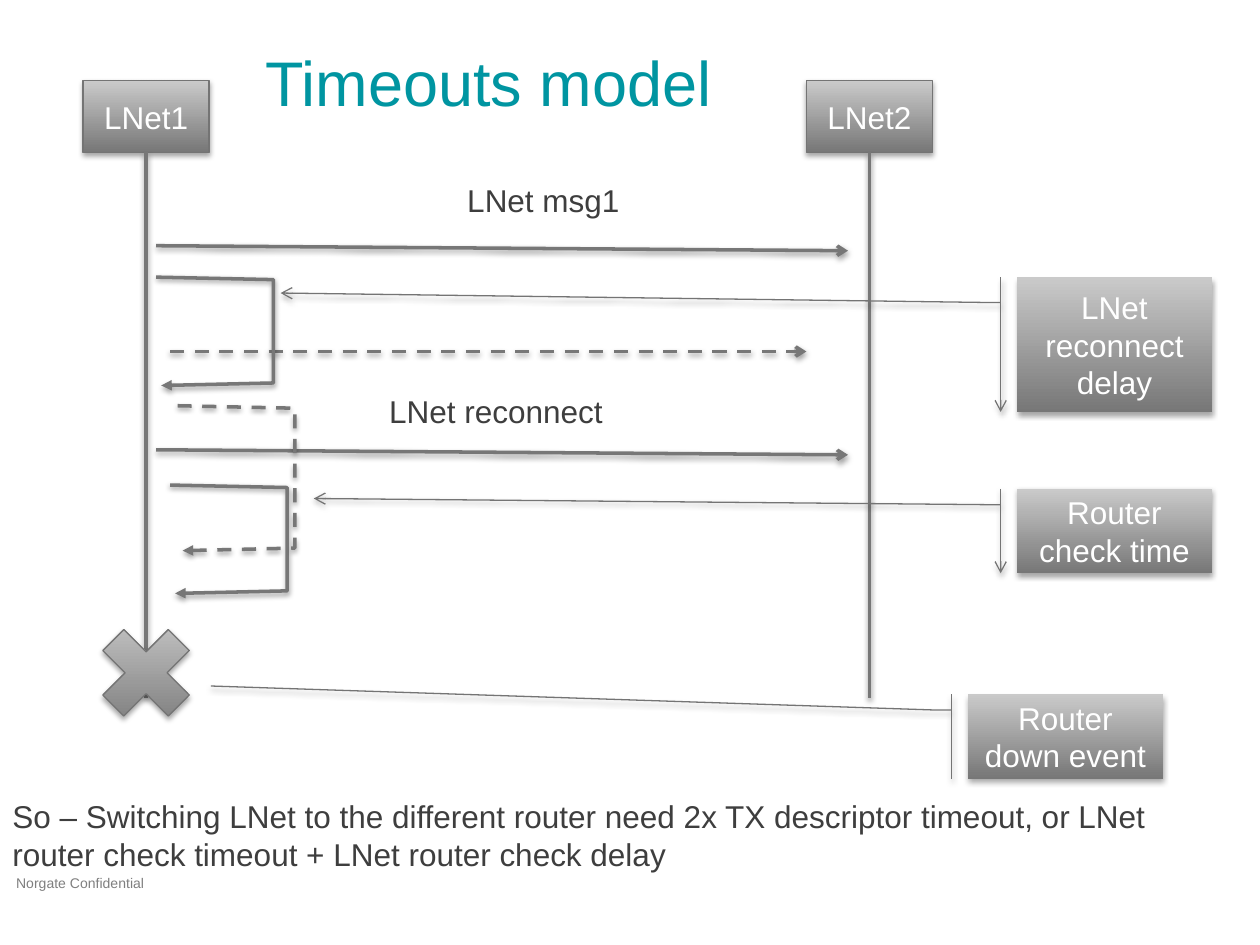
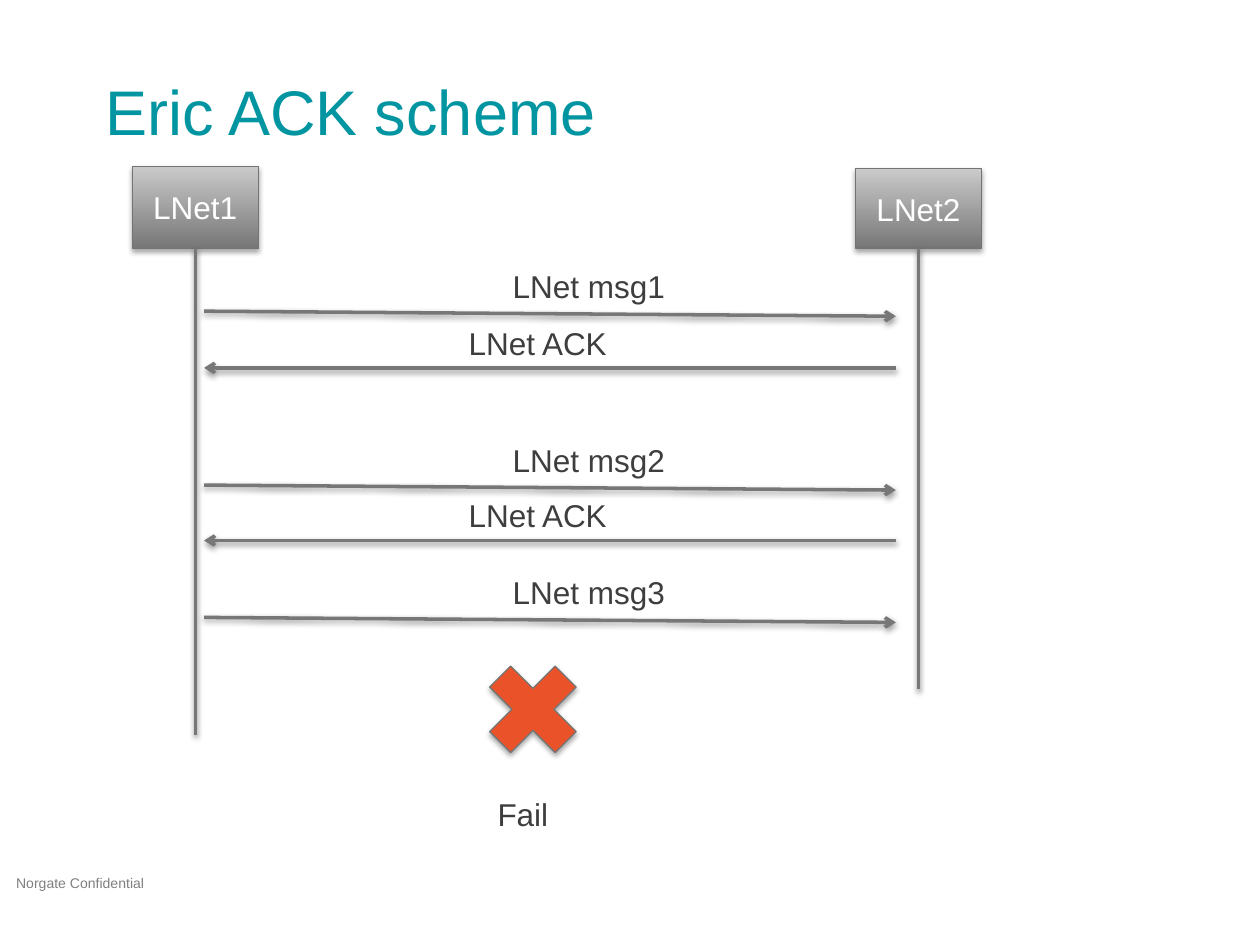
from dataclasses import dataclass
from typing import Any, Optional

from lxml import etree
from pptx import Presentation
from pptx.dml.color import RGBColor
from pptx.enum.dml import MSO_LINE
from pptx.enum.shapes import MSO_CONNECTOR, MSO_SHAPE
from pptx.enum.text import MSO_ANCHOR, MSO_AUTO_SIZE, PP_ALIGN
from pptx.oxml.ns import qn
from pptx.util import Inches, Pt

RECTANGLE = MSO_SHAPE.RECTANGLE
CROSS = MSO_SHAPE.MATH_MULTIPLY
CALLOUT = MSO_SHAPE.LINE_CALLOUT_2_ACCENT_BAR
STRAIGHT = MSO_CONNECTOR.STRAIGHT
DASH = MSO_LINE.DASH
MIDDLE = MSO_ANCHOR.MIDDLE
TOP = MSO_ANCHOR.TOP
GROW = MSO_AUTO_SIZE.SHAPE_TO_FIT_TEXT
FIXED = MSO_AUTO_SIZE.NONE
CENTER = PP_ALIGN.CENTER
LEFT = PP_ALIGN.LEFT

FONT = "Arial"
TEAL = "0095A1"
INK = "3E3E3E"
WHITE = "FFFFFF"
FOOTER_GRAY = "7F7F7F"
STROKE = "777777"
LIGHT = "CACACA"
OUTLINE = "747474"
ORANGE = "EA5329"
BOTTOM_SIDE = 2
NODE_WIDTH = 1
CROSS_SIZE = 1
MESSAGE_LENGTH = 5.49
MESSAGE_DROP = 0.04
CALLOUT_WIDTH = 1.55
BRACKET_WIDTH = 0.93
BOX_SHADOW = (35, 3.1, 1.8)
LINE_SHADOW = (38, 3.1, 1.6)


@dataclass(frozen=True)
class Node:
    """A network node with its lifeline."""
    name: str
    left: float
    top: float
    bottom: float
    lifeline_end: float


@dataclass(frozen=True)
class Arrow:
    """A message arrow between two points."""
    x1: float
    y1: float
    x2: float
    y2: float
    dashed: bool = False


@dataclass(frozen=True)
class Bracket:
    """A timeout loop that returns to its node."""
    left: float
    top: float
    height: float
    dashed: bool = False


@dataclass(frozen=True)
class Callout:
    """A timer note whose leader points at target_y, target_x in box units."""
    text: str
    left: float
    top: float
    height: float
    target_y: float
    target_x: float
    arrow: bool = True


@dataclass(frozen=True)
class Label:
    """A line of text beside the diagram."""
    text: str
    left: float
    top: float
    width: float
    height: float = 0.4
    wrap: bool = False


def rgb(value: str) -> RGBColor:
    """Turn a hex string into a colour."""
    return RGBColor.from_string(value)


def assign(target: Any, values: dict[str, Any]) -> None:
    """Set each named attribute of the target."""
    for name, value in values.items():
        setattr(target, name, value)


def write(shape: Any, text: str, size: float, color: str,
          align: Any = LEFT, **frame_format: Any) -> None:
    """Put one formatted paragraph into a shape."""
    frame = shape.text_frame
    assign(frame, frame_format)
    paragraph = frame.paragraphs[0]
    paragraph.text = text
    paragraph.alignment = align
    assign(paragraph.font, {"name": FONT, "size": Pt(size)})
    paragraph.font.color.rgb = rgb(color)


def cast_shadow(shape: Any, opacity: float, blur: float, distance: float) -> None:
    """Give a shape a soft shadow below it."""
    properties = shape.element.spPr
    effects = properties.find(qn("a:effectLst"))
    if effects is None:
        effects = etree.SubElement(properties, qn("a:effectLst"))
    outer = etree.SubElement(
        effects, qn("a:outerShdw"), blurRad=str(Pt(blur)), dist=str(Pt(distance)),
        dir=str(90 * 60000), rotWithShape="0")
    black = etree.SubElement(outer, qn("a:srgbClr"), val="000000")
    etree.SubElement(black, qn("a:alpha"), val=str(opacity * 1000))


def add_tip(shape: Any, tip: str) -> None:
    """Add an arrowhead at the end of a line."""
    line = shape.element.spPr.find(qn("a:ln"))
    etree.SubElement(line, qn("a:tailEnd"), type=tip)


def style_stroke(shape: Any, dashed: bool = False, tip: str = "") -> None:
    """Apply the shared diagram stroke."""
    shape.line.color.rgb = rgb(STROKE)
    shape.line.width = Pt(2)
    if dashed:
        shape.line.dash_style = DASH
    if tip:
        add_tip(shape, tip)
    cast_shadow(shape, *LINE_SHADOW)


def draw_box(slide: Any, kind: Any, left: float, top: float, width: float,
             height: float, text: str = "", fill: Optional[str] = None) -> Any:
    """Draw a shadowed box, gray gradient unless a fill is given."""
    box = slide.shapes.add_shape(
        kind, Inches(left), Inches(top), Inches(width), Inches(height))
    if fill:
        box.fill.solid()
        box.fill.fore_color.rgb = rgb(fill)
    else:
        box.fill.gradient()
        box.fill.gradient_angle = 90
        for stop, position, color in zip(box.fill.gradient_stops, (0, 1), (STROKE, LIGHT)):
            stop.position = position
            stop.color.rgb = rgb(color)
    box.line.color.rgb = rgb(OUTLINE)
    box.line.width = Pt(0.75)
    box.shadow.inherit = False
    cast_shadow(box, *BOX_SHADOW)
    if text:
        write(box, text, 18, WHITE, CENTER, word_wrap=True, vertical_anchor=MIDDLE)
    return box


def draw_node(slide: Any, node: Node) -> None:
    """Draw a node and the lifeline below it."""
    box = draw_box(slide, RECTANGLE, node.left, node.top, NODE_WIDTH,
                   node.bottom - node.top, node.name)
    center = Inches(node.left + NODE_WIDTH / 2)
    lifeline = slide.shapes.add_connector(
        STRAIGHT, center, Inches(node.bottom), center, Inches(node.lifeline_end))
    lifeline.begin_connect(box, BOTTOM_SIDE)
    style_stroke(lifeline)


def draw_arrow(slide: Any, arrow: Arrow) -> None:
    """Draw a message arrow."""
    line = slide.shapes.add_connector(
        STRAIGHT, Inches(arrow.x1), Inches(arrow.y1), Inches(arrow.x2), Inches(arrow.y2))
    style_stroke(line, arrow.dashed, "arrow")


def draw_bracket(slide: Any, bracket: Bracket) -> None:
    """Draw a timeout loop."""
    right = bracket.left + BRACKET_WIDTH
    bottom = bracket.top + bracket.height
    corners = [(right, bracket.top + 0.02), (right, bottom - 0.02),
               (bracket.left + 0.04, bottom)]
    builder = slide.shapes.build_freeform(Inches(bracket.left), Inches(bracket.top))
    builder.add_line_segments([(Inches(x), Inches(y)) for x, y in corners], close=False)
    loop = builder.convert_to_shape()
    loop.fill.background()
    loop.shadow.inherit = False
    style_stroke(loop, bracket.dashed, "triangle")


def draw_callout(slide: Any, callout: Callout) -> None:
    """Draw a timer note with its leader."""
    note = draw_box(slide, CALLOUT, callout.left, callout.top, CALLOUT_WIDTH,
                    callout.height, callout.text)
    leader = (0.188, -0.083, 0.188, -0.167, callout.target_y, callout.target_x)
    for index, value in enumerate(leader):
        note.adjustments[index] = value
    if callout.arrow:
        add_tip(note, "arrow")


def draw_label(slide: Any, label: Label, size: float = 18, color: str = INK,
               **frame_format: Any) -> None:
    """Draw a text label."""
    box = slide.shapes.add_textbox(Inches(label.left), Inches(label.top),
                                   Inches(label.width), Inches(label.height))
    settings = {"word_wrap": label.wrap, "auto_size": GROW, "vertical_anchor": TOP}
    write(box, label.text, size, color, **(settings | frame_format))


def start_slide(deck: Any, title: Label) -> Any:
    """Add a blank slide with the footer and a title."""
    slide = deck.slides.add_slide(deck.slide_layouts[6])
    draw_label(slide, Label("Norgate Confidential", 0.03, 6.89, 1.44, 0.24, True),
               8, FOOTER_GRAY)
    sides = ("left", "top", "right", "bottom")
    margins = {f"margin_{side}": Inches(0.1) for side in sides}
    draw_label(slide, title, 36, TEAL, auto_size=FIXED, vertical_anchor=MIDDLE, **margins)
    return slide


def message(left: float, top: float) -> Arrow:
    """Describe a slightly falling message to the second node."""
    return Arrow(left, top, left + MESSAGE_LENGTH, top + MESSAGE_DROP)


def build_timeouts(deck: Any) -> None:
    """Build the timeouts model slide."""
    slide = start_slide(deck, Label("Timeouts model", 2.01, 0.2, 4.06, 0.89, True))
    for name, left in (("LNet1", 0.66), ("LNet2", 6.4)):
        draw_node(slide, Node(name, left, 0.64, 1.21, 5.54))
    for arrow in (message(1.24, 1.95), message(1.24, 3.57),
                  Arrow(1.35, 2.79, 6.4, 2.79, True)):
        draw_arrow(slide, arrow)
    for bracket in (Bracket(1.24, 2.2, 0.86), Bracket(1.35, 3.85, 0.86),
                    Bracket(1.41, 3.22, 1.15, True)):
        draw_bracket(slide, bracket)
    for callout in (
        Callout("Router check time", 8.07, 3.88, 0.67, 0.115, -3.6),
        Callout("LNet reconnect delay", 8.07, 2.2, 1.07, 0.118, -3.77),
        Callout("Router down event", 7.68, 5.51, 0.67, -0.097, -3.875, False),
    ):
        draw_callout(slide, callout)
    for label in (
        Label("LNet msg1", 3.61, 1.39, 1.42),
        Label("LNet reconnect", 2.99, 3.06, 1.91),
        Label("So – Switching LNet to the different router need 2x TX descriptor timeout, "
              "or LNet router check timeout + LNet router check delay",
              0, 6.28, 9.73, 0.71, True),
    ):
        draw_label(slide, label)
    draw_box(slide, CROSS, 0.66, 4.84, CROSS_SIZE, CROSS_SIZE)


def build_ack_scheme(deck: Any) -> None:
    """Build the acknowledgement scheme slide."""
    slide = start_slide(deck, Label("Eric ACK scheme", 0.74, 0.43, 6.59, 0.89, True))
    draw_node(slide, Node("LNet1", 1.05, 1.32, 1.97, 5.83))
    draw_node(slide, Node("LNet2", 6.79, 1.34, 1.97, 5.47))
    left = 1.62
    for number, top in enumerate((2.47, 3.85, 4.9), start=1):
        draw_arrow(slide, message(left, top))
        draw_label(slide, Label(f"LNet msg{number}", 3.97, top - 0.4, 1.42))
    for top in (2.92, 4.29):
        draw_arrow(slide, Arrow(left + MESSAGE_LENGTH, top, left, top))
        draw_label(slide, Label("LNet ACK", 3.62, top - 0.4, 1.31))
    draw_box(slide, CROSS, 3.73, 5.13, CROSS_SIZE, CROSS_SIZE, fill=ORANGE)
    draw_label(slide, Label("Fail", 3.85, 6.26, 0.61))


def main() -> None:
    """Build and save the deck."""
    deck = Presentation()
    assign(deck, {"slide_width": Inches(10), "slide_height": Inches(7.5)})
    build_timeouts(deck)
    build_ack_scheme(deck)
    deck.save("out.pptx")


if __name__ == "__main__":
    main()
